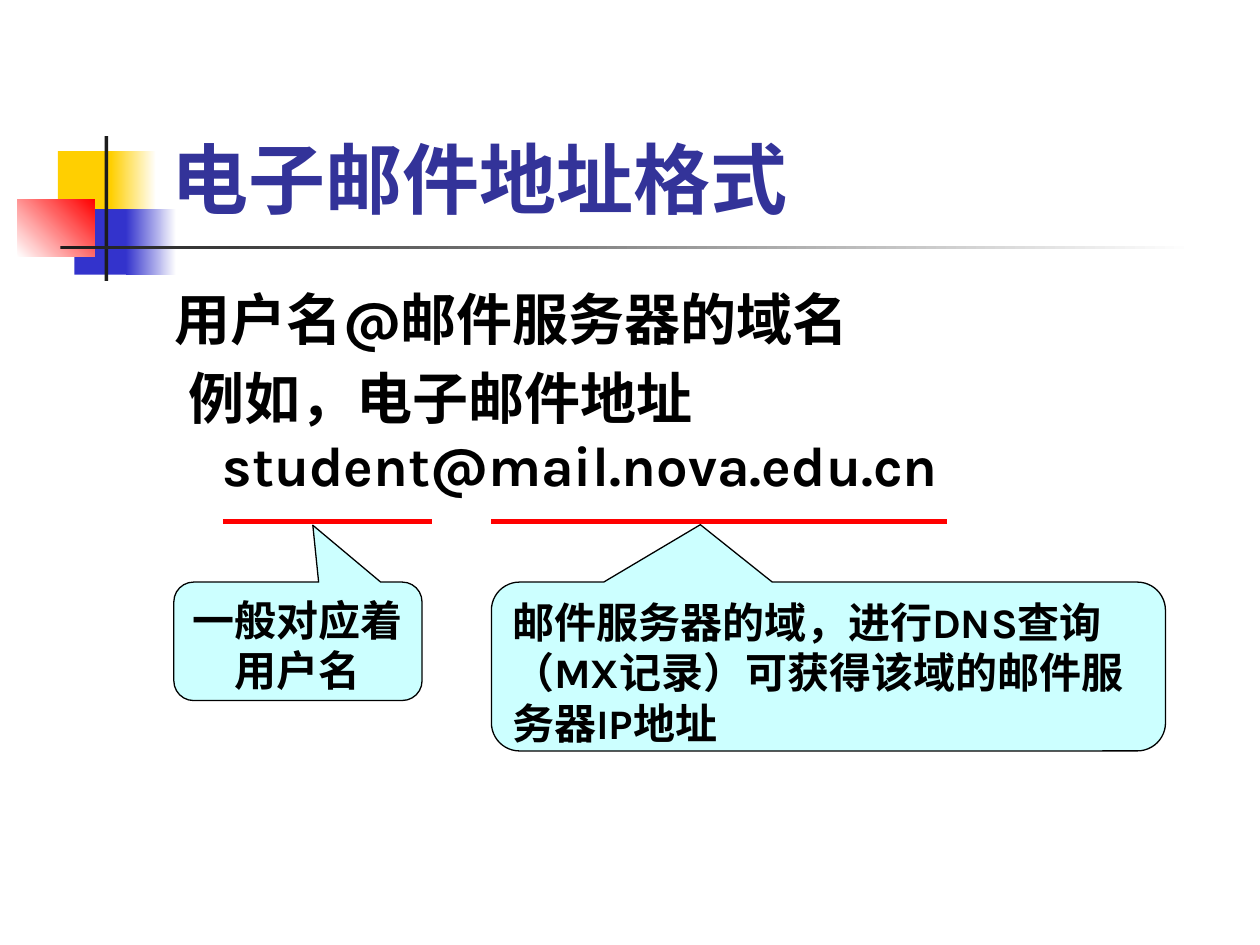
from dataclasses import dataclass

from lxml.etree import SubElement
from pptx import Presentation
from pptx.dml.color import RGBColor as RGB
from pptx.enum.shapes import MSO_CONNECTOR as CONN, MSO_SHAPE as SHAPE
from pptx.enum.text import MSO_ANCHOR as ANCHOR, PP_ALIGN as ALIGN
from pptx.oxml.ns import qn
from pptx.util import Inches, Pt


@dataclass(frozen=True)
class Theme:
    font: str = "Karla"
    title_size: float = 44
    body_size: float = 32
    note_size: float = 24
    title: str = "333399"
    text: str = "000000"
    paper: str = "FFFFFF"
    yellow: str = "FFCF01"
    blue: str = "3333CC"
    red: str = "FF0000"
    dark: str = "1C1C1C"
    note: str = "CCFFFF"


class SlideBuilder:
    """Draws styled elements on the current slide."""

    def __init__(self, slide, theme):
        self.shapes, self.theme = slide.shapes, theme

    def block(self, box, color, end=None, angle=0):
        sp = self.shapes.add_shape(SHAPE.RECTANGLE, *map(Inches, box))
        sp.shadow.inherit = False
        sp.line.fill.background()
        if end is None:
            sp.fill.solid()
            sp.fill.fore_color.rgb = RGB.from_string(color)
            return
        sp.fill.gradient()
        sp.fill.gradient_angle = angle
        for stop, value in zip(sp.fill.gradient_stops, (color, end)):
            stop.color.rgb = RGB.from_string(value)

    def set_text(self, p, text, size, color, align=ALIGN.LEFT):
        p.text, p.alignment = text, align
        p.font.name, p.font.size, p.font.bold = self.theme.font, Pt(size), True
        p.font.color.rgb = RGB.from_string(color)

    def frame(self, box, anchor):
        tf = self.shapes.add_textbox(*map(Inches, box)).text_frame
        tf.word_wrap, tf.vertical_anchor = True, anchor
        return tf

    def title(self, box, text):
        tf = self.frame(box, ANCHOR.BOTTOM)
        self.set_text(tf.paragraphs[0], text, self.theme.title_size, self.theme.title)

    def body(self, box, items, margin):
        tf = self.frame(box, ANCHOR.TOP)
        for i, (text, first) in enumerate(items):
            p = tf.add_paragraph() if i else tf.paragraphs[0]
            self.set_text(p, text, self.theme.body_size, self.theme.text)
            p.space_before = Pt(self.theme.body_size * 0.2)
            pPr = p._p.get_or_add_pPr()
            pPr.set("marL", str(Inches(margin)))
            pPr.set("indent", str(Inches(first - margin)))

    def callout(self, box, tip, text, align):
        sp = self.shapes.add_shape(SHAPE.ROUNDED_RECTANGULAR_CALLOUT, *map(Inches, box))
        sp.shadow.inherit = False
        sp.adjustments[0], sp.adjustments[1] = tip
        sp.fill.solid()
        sp.fill.fore_color.rgb = RGB.from_string(self.theme.note)
        sp.line.color.rgb = RGB.from_string(self.theme.text)
        sp.line.width = Pt(0.75)
        tf = sp.text_frame
        tf.word_wrap, tf.vertical_anchor = True, ANCHOR.TOP
        self.set_text(tf.paragraphs[0], text, self.theme.note_size, self.theme.text, align)

    def underline(self, left, right, y):
        ends = map(Inches, (left, y, right, y))
        line = self.shapes.add_connector(CONN.STRAIGHT, *ends)
        line.line.color.rgb = RGB.from_string(self.theme.red)
        line.line.width = Pt(3)
        SubElement(line._element.spPr, qn("a:effectLst"))


def main():
    prs = Presentation()
    prs.slide_width, prs.slide_height = Inches(10), Inches(7.5)
    t = Theme()
    s = SlideBuilder(prs.slides.add_slide(prs.slide_layouts[6]), t)

    s.block((0.46, 1.2, 0.48, 0.52), t.yellow)
    s.block((0.88, 1.2, 0.36, 0.52), t.yellow, t.paper)
    s.block((0.59, 1.66, 0.46, 0.52), t.blue)
    s.block((1, 1.66, 0.4, 0.52), t.blue, t.paper)
    s.block((0.14, 1.58, 0.61, 0.46), t.paper, t.red, 45)
    s.block((0.83, 1.08, 0.03, 1.15), t.dark)
    s.block((0.48, 1.95, 9, 0.03), t.dark, t.paper)

    s.title((1.26, 0.23, 8.52, 1.6), "电子邮件地址格式")
    s.body((1.29, 2.21, 8.5, 4.5), [
        ("用户名@邮件服务器的域名", 0),
        ("例如，电子邮件地址 student@mail.nova.edu.cn", 0.11),
    ], margin=0.38)

    s.callout((1.38, 4.62, 1.97, 0.94), (0.06, -0.98), "一般对应着用户名", ALIGN.CENTER)
    s.callout((3.9, 4.62, 5.35, 1.34), (-0.19, -0.84),
              "邮件服务器的域，进行DNS查询（MX记录）可获得该域的邮件服务器IP地址", ALIGN.LEFT)
    for left, right in ((1.77, 3.43), (3.9, 7.52)):
        s.underline(left, right, 4.14)

    prs.save("out.pptx")


if __name__ == "__main__":
    main()
